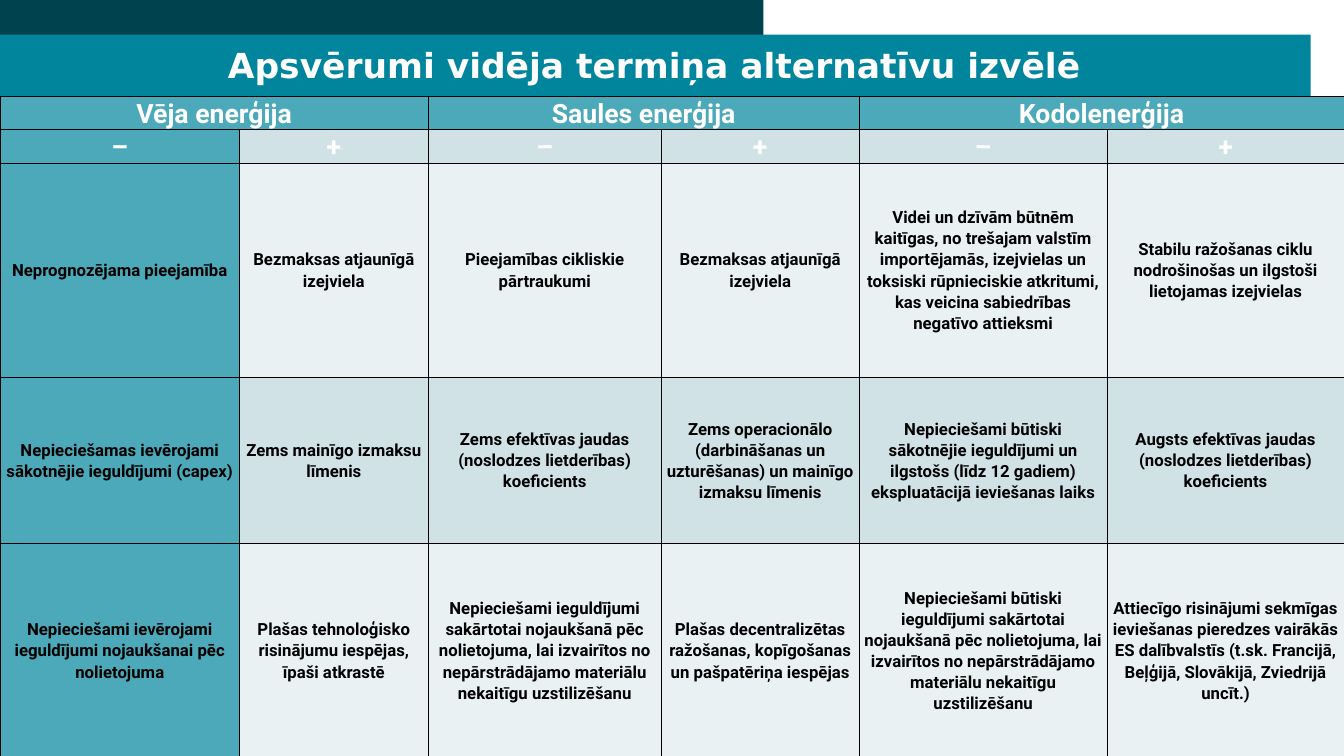
from lxml import etree
from pptx import Presentation
from pptx.dml.color import RGBColor
from pptx.enum import shapes, text
from pptx.oxml import ns
from pptx.util import Inches, Pt

TITLE = "Apsvērumi vidēja termiņa alternatīvu izvēlē"
ENERGIES = ["Vēja enerģija", "Saules enerģija", "Kodolenerģija"]
ROWS = [
    ["–", "+"] * len(ENERGIES),
    ["Neprognozējama pieejamība",
     "Bezmaksas atjaunīgā izejviela",
     "Pieejamības cikliskie pārtraukumi",
     "Bezmaksas atjaunīgā izejviela",
     "Videi un dzīvām būtnēm kaitīgas, no trešajam valstīm importējamās, izejvielas un "
     "toksiski rūpnieciskie atkritumi, kas veicina sabiedrības negatīvo attieksmi",
     "Stabilu ražošanas ciklu nodrošinošas un ilgstoši lietojamas izejvielas"],
    ["Nepieciešamas ievērojami sākotnējie ieguldījumi (capex)",
     "Zems mainīgo izmaksu līmenis",
     "Zems efektīvas jaudas (noslodzes lietderības) koeficients",
     "Zems operacionālo (darbināšanas un uzturēšanas) un mainīgo izmaksu līmenis",
     "Nepieciešami būtiski sākotnējie ieguldījumi un ilgstošs (līdz 12 gadiem) "
     "ekspluatācijā ieviešanas laiks",
     "Augsts efektīvas jaudas (noslodzes lietderības) koeficients"],
    ["Nepieciešami ievērojami ieguldījumi nojaukšanai pēc nolietojuma",
     "Plašas tehnoloģisko risinājumu iespējas, īpaši atkrastē",
     "Nepieciešami ieguldījumi sakārtotai nojaukšanā pēc nolietojuma, lai izvairītos no "
     "nepārstrādājamo materiālu nekaitīgu uzstilizēšanu",
     "Plašas decentralizētas ražošanas, kopīgošanas un pašpatēriņa iespējas",
     "Nepieciešami būtiski ieguldījumi sakārtotai nojaukšanā pēc nolietojuma, lai "
     "izvairītos no nepārstrādājamo materiālu nekaitīgu uzstilizēšanu",
     "Attiecīgo risinājumi sekmīgas ieviešanas pieredzes vairākās ES dalībvalstīs "
     "(t.sk. Francijā, Beļģijā, Slovākijā, Zviedrijā uncīt.)"],
]
COLUMN_WIDTHS = [3.38, 2.66, 3.29, 2.79, 3.5, 3.34]
ROW_HEIGHTS = [0.46, 0.46, 3.02, 2.35, 3.02]
BANDS = [((-0.04, 0, 10.81, 10.67), "00434E"), ((-0.04, 0.49, 18.53, 9.69), "00859D")]
TEAL, PALE, PALER = "4CA9B9", "D0E2E6", "E9F1F3"
WHITE, BLACK = "FFFFFF", "000000"


def rgb(value):
    return RGBColor.from_string(value)


def format_paragraph(para, font_name, size, color, line_spacing):
    para.alignment = text.PP_ALIGN.CENTER
    para.line_spacing = line_spacing
    para.font.name, para.font.size, para.font.bold = font_name, Pt(size), True
    para.font.color.rgb = rgb(color)


def add_borders(cell):
    properties = cell._tc.get_or_add_tcPr()
    for index, side in enumerate(("lnL", "lnR", "lnT", "lnB")):
        line = etree.Element(ns.qn(f"a:{side}"), w=str(Pt(1)))
        solid = etree.SubElement(line, ns.qn("a:solidFill"))
        etree.SubElement(solid, ns.qn("a:srgbClr"), val=BLACK)
        properties.insert(index, line)


def cell_fill(row, column):
    if row == 0 or column == 0:
        return TEAL
    return PALE if row % 2 else PALER


def add_bands(page):
    for position, (bounds, color) in enumerate(BANDS):
        band = page.shapes.add_shape(shapes.MSO_SHAPE.RECTANGLE, *map(Inches, bounds))
        band.shadow.inherit = False
        band.fill.solid()
        band.fill.fore_color.rgb = rgb(color)
        band.line.fill.background()
        page.shapes._spTree.insert(2 + position, band._element)  # behind the title


def set_title(page):
    title = page.shapes.title
    title.left, title.top, title.width, title.height = map(Inches, (0, 0.55, 18.47, 0.81))
    frame = title.text_frame
    frame.text = TITLE
    frame.word_wrap = True
    frame.auto_size = text.MSO_AUTO_SIZE.NONE
    frame.vertical_anchor = text.MSO_ANCHOR.MIDDLE
    format_paragraph(frame.paragraphs[0], "DejaVu Sans", 35, WHITE, 0.9)


def add_comparison(page):
    heading = [label for energy in ENERGIES for label in (energy, "")]
    content = [heading] + ROWS
    frame = page.shapes.add_table(len(content), len(heading), 0, Inches(1.36),
                                  Inches(sum(COLUMN_WIDTHS)), Inches(sum(ROW_HEIGHTS)))
    table = frame.table
    for column, width in zip(table.columns, COLUMN_WIDTHS):
        column.width = Inches(width)
    for row, height in zip(table.rows, ROW_HEIGHTS):
        row.height = Inches(height)
    for column in range(0, len(heading), 2):
        table.cell(0, column).merge(table.cell(0, column + 1))

    for r, labels in enumerate(content):
        size, color = (27, WHITE) if r < 2 else (17, BLACK)
        for c, label in enumerate(labels):
            cell = table.cell(r, c)
            cell.fill.solid()
            cell.fill.fore_color.rgb = rgb(cell_fill(r, c))
            add_borders(cell)
            if cell.is_spanned:
                continue
            cell.text = label
            cell.vertical_anchor = text.MSO_ANCHOR.MIDDLE
            cell.margin_left = cell.margin_right = Inches(0.07)
            cell.margin_top = cell.margin_bottom = 0
            para = cell.text_frame.paragraphs[0]
            format_paragraph(para, "Roboto", size, color, 1.07)
            para.space_after = Pt(8)


def main():
    deck = Presentation()
    deck.slide_width, deck.slide_height = Inches(18.96), Inches(10.67)
    page = deck.slides.add_slide(deck.slide_layouts[5])
    add_bands(page)
    set_title(page)
    add_comparison(page)
    deck.save("out.pptx")


if __name__ == "__main__":
    main()
